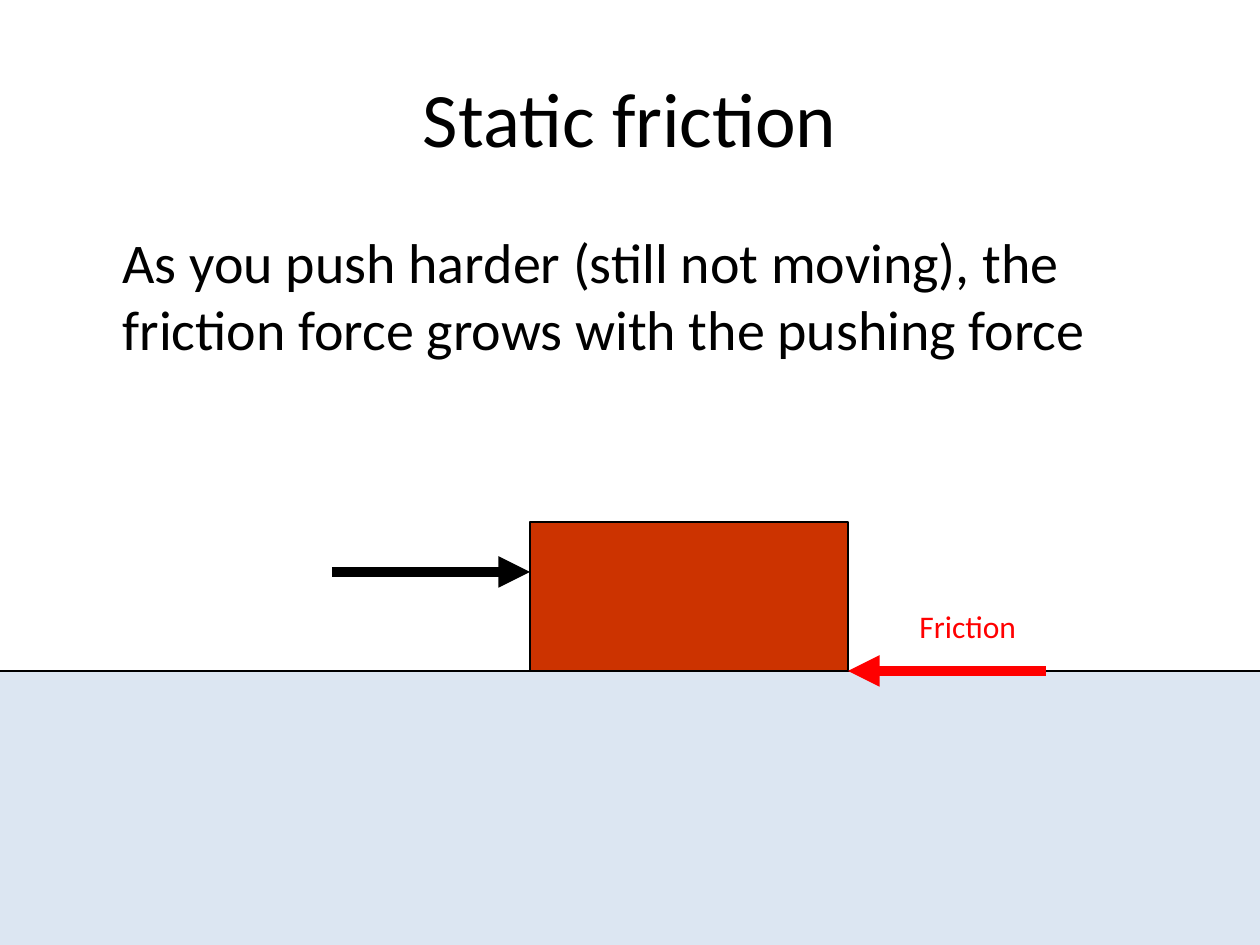
"""Build a slide on static friction: a pushed block resting on the ground."""
from dataclasses import dataclass

from lxml import etree
from pptx import Presentation
from pptx.dml.color import RGBColor
from pptx.enum.shapes import MSO_CONNECTOR, MSO_SHAPE
from pptx.enum.text import MSO_ANCHOR, MSO_AUTO_SIZE, PP_ALIGN
from pptx.oxml.ns import qn
from pptx.util import Emu, Pt

STRAIGHT = MSO_CONNECTOR.STRAIGHT
RECTANGLE = MSO_SHAPE.RECTANGLE
TOP, MIDDLE = MSO_ANCHOR.TOP, MSO_ANCHOR.MIDDLE
LEFT, CENTER = PP_ALIGN.LEFT, PP_ALIGN.CENTER
FIXED = MSO_AUTO_SIZE.NONE
PX_PER_INCH = 126
SLIDE_WIDTH, SLIDE_HEIGHT = 1260, 945


@dataclass(frozen=True)
class Theme:
    """Colours, font and point sizes of the slide."""
    ink: str = "000000"
    ground: str = "DCE6F2"
    block: str = "CC3300"
    friction: str = "FF0000"
    font: str = "Calibri"
    title_size: int = 44
    body_size: int = 32
    label_size: int = 18
    outline: float = 0.75
    arrow: int = 6


def px(length):
    """Turn pixels into EMU."""
    return Emu(round(length * 914400 / PX_PER_INCH))


def write(box, text, *, font, size, color, align=LEFT, anchor=TOP, indent=0):
    """Put one formatted, unbulleted paragraph into a box."""
    frame = box.text_frame
    frame.word_wrap = True
    frame.auto_size = FIXED
    frame.vertical_anchor = anchor
    para = frame.paragraphs[0]
    properties = para._p.get_or_add_pPr()
    properties.set("marL", str(px(indent)))
    properties.set("indent", "0")
    etree.SubElement(properties, qn("a:buNone"))
    para.alignment = align
    para.space_before = Pt(0)
    span = para.add_run()
    span.text = text
    span.font.name = font
    span.font.size = Pt(size)
    span.font.color.rgb = RGBColor.from_string(color)


class SlideBuilder:
    """Hold the theme and the current slide, and add elements to it."""

    def __init__(self, page, theme):
        """Keep the page and its theme."""
        self.page = page
        self.theme = theme

    def placeholder(self, index, text, area, **style):
        """Move and fill a template placeholder."""
        box = self.page.placeholders[index]
        box.left, box.top, box.width, box.height = map(px, area)
        write(box, text, font=self.theme.font, color=self.theme.ink, **style)

    def label(self, text, area, color):
        """Add a small text box."""
        box = self.page.shapes.add_textbox(*map(px, area))
        write(box, text, font=self.theme.font, size=self.theme.label_size, color=color)

    def rectangle(self, area, fill):
        """Add a filled rectangle with a thin outline."""
        shape = self.page.shapes.add_shape(RECTANGLE, *map(px, area))
        shape.shadow.inherit = False
        shape.fill.solid()
        shape.fill.fore_color.rgb = RGBColor.from_string(fill)
        shape.line.color.rgb = RGBColor.from_string(self.theme.ink)
        shape.line.width = Pt(self.theme.outline)

    def arrow(self, start, end, color):
        """Add a thick arrow pointing at its end."""
        line = self.page.shapes.add_connector(STRAIGHT, *map(px, (*start, *end)))
        line.line.color.rgb = RGBColor.from_string(color)
        line.line.width = Pt(self.theme.arrow)
        properties = line._element.spPr
        etree.SubElement(properties.find(qn("a:ln")), qn("a:tailEnd"), type="triangle")
        etree.SubElement(properties, qn("a:effectLst"))


def main():
    """Build and save the deck."""
    deck = Presentation()
    deck.slide_width, deck.slide_height = px(SLIDE_WIDTH), px(SLIDE_HEIGHT)
    theme = Theme()
    builder = SlideBuilder(deck.slides.add_slide(deck.slide_layouts[1]), theme)

    builder.placeholder(0, "Static friction", (63, 38, 1134, 158),
                        size=theme.title_size, align=CENTER, anchor=MIDDLE)
    builder.placeholder(
        1, "As you push harder (still not moving), the friction force grows with the pushing force",
        (63, 221, 1134, 624), size=theme.body_size, indent=47)

    ground_top, bleed = 671, 25
    block_left, block_width, block_height = 530, 318, 149
    block_right = block_left + block_width
    block_top = ground_top - block_height
    push_height = block_top + 50
    arrow_length = 198

    builder.rectangle((-bleed, ground_top, SLIDE_WIDTH + 2 * bleed, 287), theme.ground)
    builder.rectangle((block_left, block_top, block_width, block_height), theme.block)
    builder.arrow((block_left - arrow_length, push_height), (block_left, push_height), theme.ink)
    builder.arrow((block_right + arrow_length, ground_top), (block_right, ground_top),
                  theme.friction)
    builder.label("Friction", (907, 601, 218, 50), theme.friction)

    deck.save("out.pptx")


if __name__ == "__main__":
    main()
